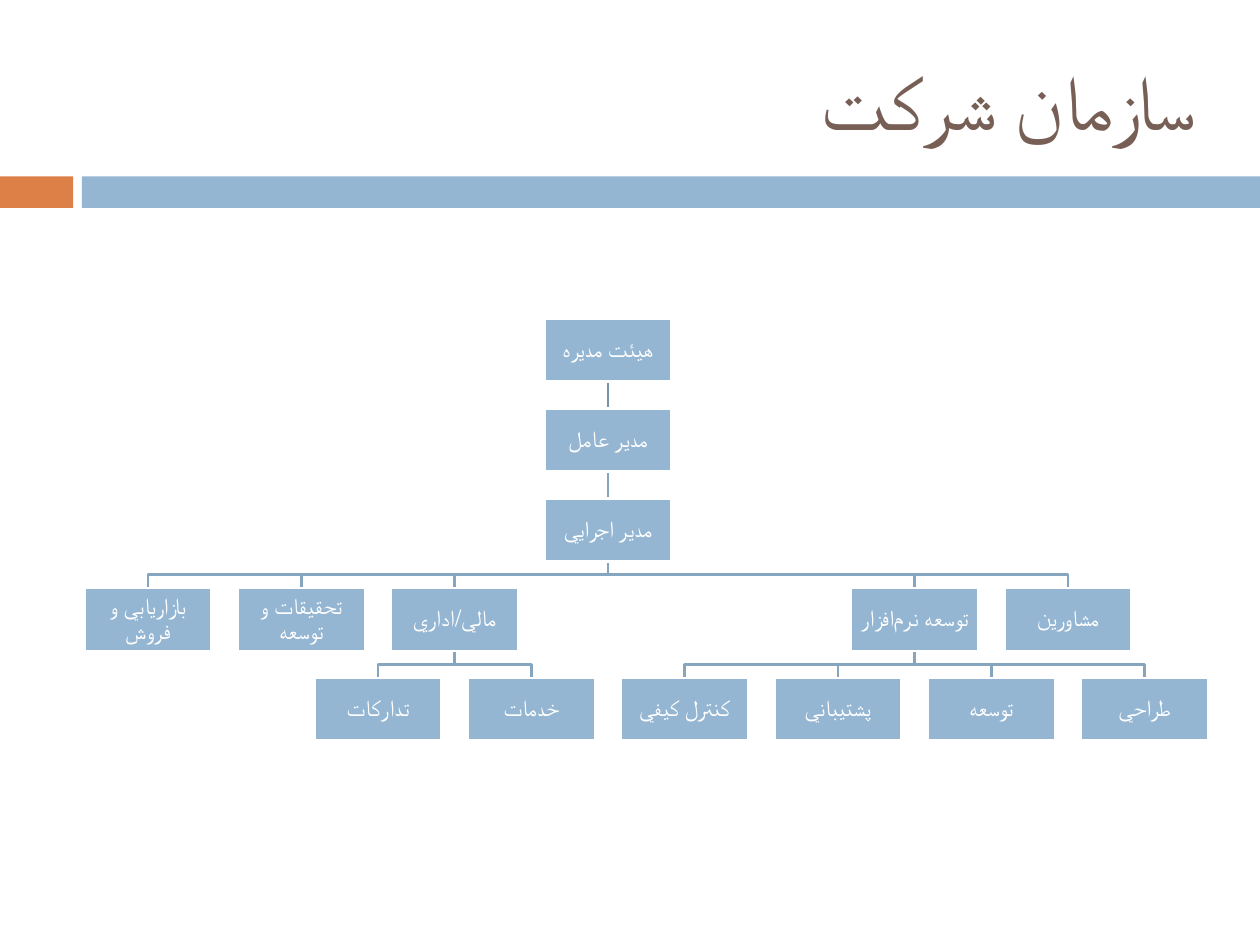
from dataclasses import dataclass
from typing import Optional

from lxml.etree import SubElement
from pptx import Presentation
from pptx.dml.color import RGBColor
from pptx.enum.shapes import MSO_CONNECTOR, MSO_SHAPE
from pptx.enum.text import MSO_ANCHOR, PP_ALIGN
from pptx.oxml.ns import qn
from pptx.util import Inches, Pt

BLUE = RGBColor(0x94, 0xB6, 0xD2)
ORANGE = RGBColor(0xDD, 0x80, 0x47)
BROWN = RGBColor(0x77, 0x5F, 0x55)
WHITE = RGBColor(0xFF, 0xFF, 0xFF)
LINK = RGBColor(0x86, 0xA5, 0xBF)
TOP_LINK = RGBColor(0x77, 0x92, 0xA8)
FONT = "Cabin"
ZWNJ = chr(0x200C)  # zero-width non-joiner

# Chart grid in inches: boxes sit on half-box columns
LEFT, TOP = 0.67, 2.53
COL_W = (8.58 - LEFT) / 13
ROW_H = (5.38 - TOP) / 4
BOX_W, BOX_H = 1.01, 0.5


@dataclass
class Unit:
    key: str
    text: str
    col: int
    row: int
    parent: Optional[str] = None
    link: RGBColor = LINK


UNITS = [
    Unit("board", "هيئت مديره", 6, 0),
    Unit("ceo", "مدير عامل", 6, 1, "board", TOP_LINK),
    Unit("executive", "مدير اجرايي", 6, 2, "ceo"),
    Unit("advisors", "مشاورين", 12, 3, "executive"),
    Unit("software", f"توسعه نرم{ZWNJ}افزار", 10, 3, "executive"),
    Unit("design", "طراحي", 13, 4, "software"),
    Unit("development", "توسعه", 11, 4, "software"),
    Unit("support", "پشتيباني", 9, 4, "software"),
    Unit("quality", "كنترل كيفي", 7, 4, "software"),
    Unit("finance", "مالي/اداري", 4, 3, "executive"),
    Unit("services", "خدمات", 5, 4, "finance"),
    Unit("supplies", "تداركات", 3, 4, "finance"),
    Unit("research", "تحقيقات و توسعه", 2, 3, "executive"),
    Unit("marketing", "بازاريابي و فروش", 0, 3, "executive"),
]


def add_rect(s, x: float, y: float, w: float, h: float, fill: RGBColor):
    sp = s.shapes.add_shape(MSO_SHAPE.RECTANGLE, Inches(x), Inches(y), Inches(w), Inches(h))
    sp.shadow.inherit = False
    sp.fill.solid()
    sp.fill.fore_color.rgb = fill
    sp.line.fill.background()
    return sp


def add_run(p, text: str, size: int, color: RGBColor) -> None:
    r = p.add_run()
    r.text = text
    r.font.size = Pt(size)
    r.font.name = FONT
    r.font.color.rgb = color


def add_unit(s, unit: Unit):
    sp = add_rect(s, LEFT + unit.col * COL_W, TOP + unit.row * ROW_H, BOX_W, BOX_H, BLUE)
    sp.line.color.rgb = WHITE
    sp.line.width = Pt(1.5)
    tf = sp.text_frame
    tf.word_wrap = True
    tf.vertical_anchor = MSO_ANCHOR.MIDDLE
    tf.margin_left = tf.margin_right = tf.margin_top = tf.margin_bottom = Inches(0.01)
    p = tf.paragraphs[0]
    p.alignment = PP_ALIGN.CENTER
    p.line_spacing = 0.9
    add_run(p, unit.text, 13, WHITE)
    return sp


def add_link(s, parent, child, color: RGBColor) -> None:
    x1, y1 = parent.left + parent.width // 2, parent.top + parent.height
    x2, y2 = child.left + child.width // 2, child.top
    if x1 == x2:
        link = s.shapes.add_connector(MSO_CONNECTOR.STRAIGHT, x1, y1, x2, y2)
        link.begin_connect(parent, 2)
        link.end_connect(child, 0)
        SubElement(link.element.spPr, qn("a:effectLst"))
    else:
        mid = (y1 + y2) // 2
        path = s.shapes.build_freeform(x1, y1)
        path.add_line_segments([(x1, mid), (x2, mid), (x2, y2)], close=False)
        link = path.convert_to_shape()
        link.fill.background()
        link.shadow.inherit = False
    link.line.color.rgb = color
    link.line.width = Pt(1.5)


def main() -> None:
    prs = Presentation()
    prs.slide_width, prs.slide_height = Inches(10), Inches(7.5)
    s = prs.slides.add_slide(prs.slide_layouts[5])

    # Header bars
    add_rect(s, 0, 1.4, 0.58, 0.25, ORANGE)
    add_rect(s, 0.65, 1.4, 9.35, 0.25, BLUE)

    # Title
    title = s.shapes.title
    title.left, title.top = Inches(0.67), Inches(0.25)
    title.width, title.height = Inches(8.92), Inches(1.08)
    title.text_frame.vertical_anchor = MSO_ANCHOR.MIDDLE
    p = title.text_frame.paragraphs[0]
    p.alignment = PP_ALIGN.RIGHT
    p._p.get_or_add_pPr().set("rtl", "1")
    add_run(p, "سازمان شركت", 44, BROWN)

    # Organisation chart
    boxes = {unit.key: add_unit(s, unit) for unit in UNITS}
    for unit in UNITS:
        if unit.parent:
            add_link(s, boxes[unit.parent], boxes[unit.key], unit.link)

    # Boxes go in front of their links
    for box in boxes.values():
        box.element.getparent().append(box.element)

    prs.save("out.pptx")


if __name__ == "__main__":
    main()
